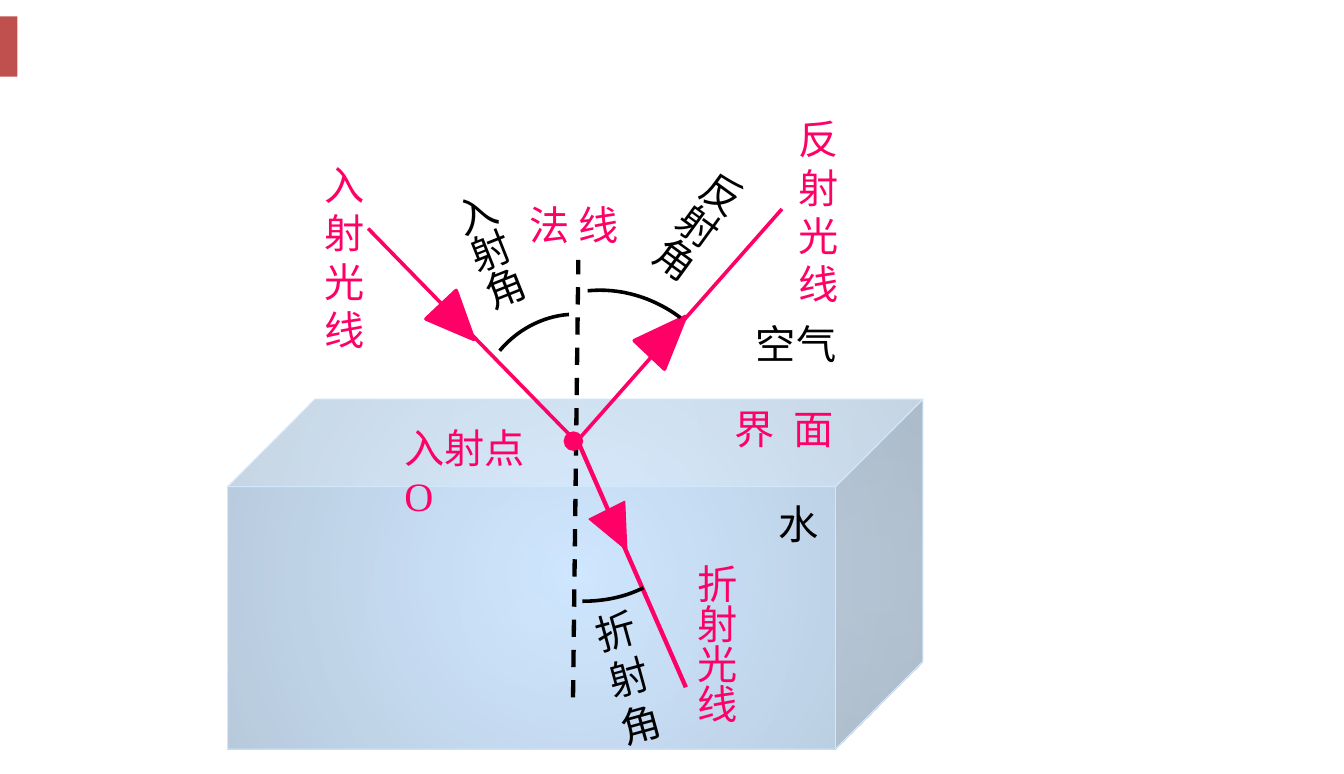
from lxml import etree
from pptx import Presentation
from pptx.dml.color import RGBColor
from pptx.enum.dml import MSO_LINE
from pptx.enum.shapes import MSO_CONNECTOR, MSO_SHAPE
from pptx.oxml.ns import qn
from pptx.util import Cm, Pt

STRAIGHT = MSO_CONNECTOR.STRAIGHT
DASH = MSO_LINE.DASH
RECTANGLE = MSO_SHAPE.RECTANGLE
CUBE = MSO_SHAPE.CUBE
TRIANGLE = MSO_SHAPE.ISOSCELES_TRIANGLE
OVAL = MSO_SHAPE.OVAL

PINK = RGBColor(0xFF, 0x00, 0x66)
BLACK = RGBColor(0x00, 0x00, 0x00)
RED = RGBColor(0xC0, 0x50, 0x4D)
WATER_CENTER = RGBColor(0x99, 0xCC, 0xFF)
WATER_EDGE = RGBColor(0x70, 0x95, 0xBA)
WATER_LINE = RGBColor(0xD1, 0xE7, 0xFC)

SERIF = "Times New Roman"
SANS = "Noto Sans CJK SC"


def add_text(para, text, font=SERIF, color=BLACK, size=28, spacing=0):
    span = para.add_run()
    span.text = text
    span.font.name = font
    span.font.size = Pt(size)
    span.font.color.rgb = color
    properties = span.font._element
    etree.SubElement(properties, qn("a:ea"), typeface=SANS)
    if spacing:
        properties.set("spc", str(spacing))


class Diagram:
    arc_steps = 16

    def __init__(self, page):
        self.shapes = page.shapes

    def label(self, text, left, top, width, height, angle=0, vertical=False, **style):
        box = self.shapes.add_textbox(Cm(left), Cm(top), Cm(width), Cm(height))
        box.rotation = angle
        frame = box.text_frame
        frame.word_wrap = True
        if vertical:
            frame._txBody.bodyPr.set("vert", "eaVert")
        add_text(frame.paragraphs[0], text, **style)
        return frame.paragraphs[0]

    def solid(self, kind, left, top, width, height, color, angle=0, outline=0):
        shape = self.shapes.add_shape(kind, Cm(left), Cm(top), Cm(width), Cm(height))
        shape.shadow.inherit = False
        shape.rotation = angle
        shape.fill.solid()
        shape.fill.fore_color.rgb = color
        if outline:
            shape.line.color.rgb = color
            shape.line.width = Pt(outline)
        else:
            shape.line.fill.background()
        return shape

    def water(self, left, top, width, height):
        block = self.solid(CUBE, left, top, width, height, WATER_CENTER)
        block.line.color.rgb = WATER_LINE
        block.line.width = Pt(0.75)
        block.fill.gradient()
        stops = block.fill.gradient_stops
        for stop, color, position in zip(stops, (WATER_CENTER, WATER_EDGE), (0, 1)):
            stop.color.rgb = color
            stop.position = position
        gradient = block._element.spPr.find(qn("a:gradFill"))
        for color, opacity in zip(gradient.iter(qn("a:srgbClr")), (47000, 50000)):
            etree.SubElement(color, qn("a:alpha"), val=str(opacity))
        linear = gradient.find(qn("a:lin"))
        radial = etree.Element(qn("a:path"), path="circle")
        center = dict.fromkeys("ltrb", "50000")
        etree.SubElement(radial, qn("a:fillToRect"), center)
        gradient.replace(linear, radial)

    def line(self, start, end, color=PINK, width=2.5, dash=None):
        ends = [Cm(value) for value in (*start, *end)]
        connector = self.shapes.add_connector(STRAIGHT, *ends)
        connector.line.color.rgb = color
        connector.line.width = Pt(width)
        if dash:
            connector.line.dash_style = dash
        etree.SubElement(connector._element.spPr, qn("a:effectLst"))

    def arc(self, *controls):
        points = []
        for step in range(self.arc_steps + 1):
            t = step / self.arc_steps
            weights = ((1 - t) ** 3, 3 * t * (1 - t) ** 2, 3 * t**2 * (1 - t), t**3)
            points.append(tuple(
                Cm(sum(weight * value for weight, value in zip(weights, axis)))
                for axis in zip(*controls)
            ))
        builder = self.shapes.build_freeform(*points[0])
        builder.add_line_segments(points[1:], close=False)
        curve = builder.convert_to_shape()
        curve.shadow.inherit = False
        curve.fill.background()
        curve.line.color.rgb = BLACK
        curve.line.width = Pt(2.5)


def main():
    deck = Presentation()
    deck.slide_width, deck.slide_height = Cm(33), Cm(19)
    page = deck.slides.add_slide(deck.slide_layouts[6])
    diagram = Diagram(page)

    diagram.solid(RECTANGLE, 0, 0.4, 0.43, 1.48, RED)
    diagram.label("空气", 18.31, 7.72, 2.87, 1.45)
    diagram.water(5.59, 9.8, 17.07, 8.59)
    diagram.label("界 面", 17.78, 9.8, 3.3, 1.45, color=PINK, spacing=350)
    diagram.label("水", 18.87, 12.12, 1.5, 1.45)

    diagram.label("入射光线", 7.72, 3.81, 1.37, 5.03, color=PINK)
    diagram.line((9.04, 5.61), (14, 10.69))
    diagram.solid(TRIANGLE, 10.72, 7.32, 1.02, 1.17, PINK, angle=136.7, outline=2.5)

    diagram.label("法 线", 12.75, 4.78, 2.92, 2.64, font=SANS, color=PINK)
    diagram.line((14.07, 17.12), (14.2, 6.38), color=BLACK, width=3, dash=DASH)
    point = diagram.label("入射点", 9.68, 10.26, 4.1, 1.45, font=SANS, color=PINK)
    add_text(point, "O", color=PINK)
    diagram.solid(OVAL, 13.84, 10.59, 0.48, 0.48, PINK)

    diagram.arc((12.27, 8.61), (12.7, 8.1), (13.31, 7.77), (13.97, 7.72))
    diagram.label("入射角", 11.07, 4.49, 1.7, 3.56, angle=338.3, vertical=True, font=SANS)

    diagram.line((14.22, 10.77), (19.2, 5.13))
    diagram.solid(TRIANGLE, 15.88, 7.59, 1.02, 1.3, PINK, angle=43.3, outline=2.5)
    diagram.label("反射光线", 19.35, 2.69, 1.37, 5.03, color=PINK)
    diagram.arc((14.43, 7.14), (15.21, 7.06), (16.03, 7.29), (16.71, 7.8))
    diagram.label("反射角", 16.15, 3.72, 1.7, 3.56, angle=36.1, vertical=True, font=SANS)

    diagram.line((14.15, 10.74), (16.84, 16.87), width=3)
    diagram.solid(TRIANGLE, 14.66, 12.47, 0.97, 1.09, PINK, angle=153.5, outline=1)
    diagram.label("折射光线", 16.61, 13.59, 1.7, 4.7, vertical=True, color=PINK)
    diagram.arc((15.8, 14.43), (15.34, 14.66), (14.83, 14.76), (14.3, 14.76))
    diagram.label("折射角", 14.68, 14.68, 1.73, 3.84, angle=344.6, font=SANS)

    deck.save("out.pptx")


if __name__ == "__main__":
    main()
